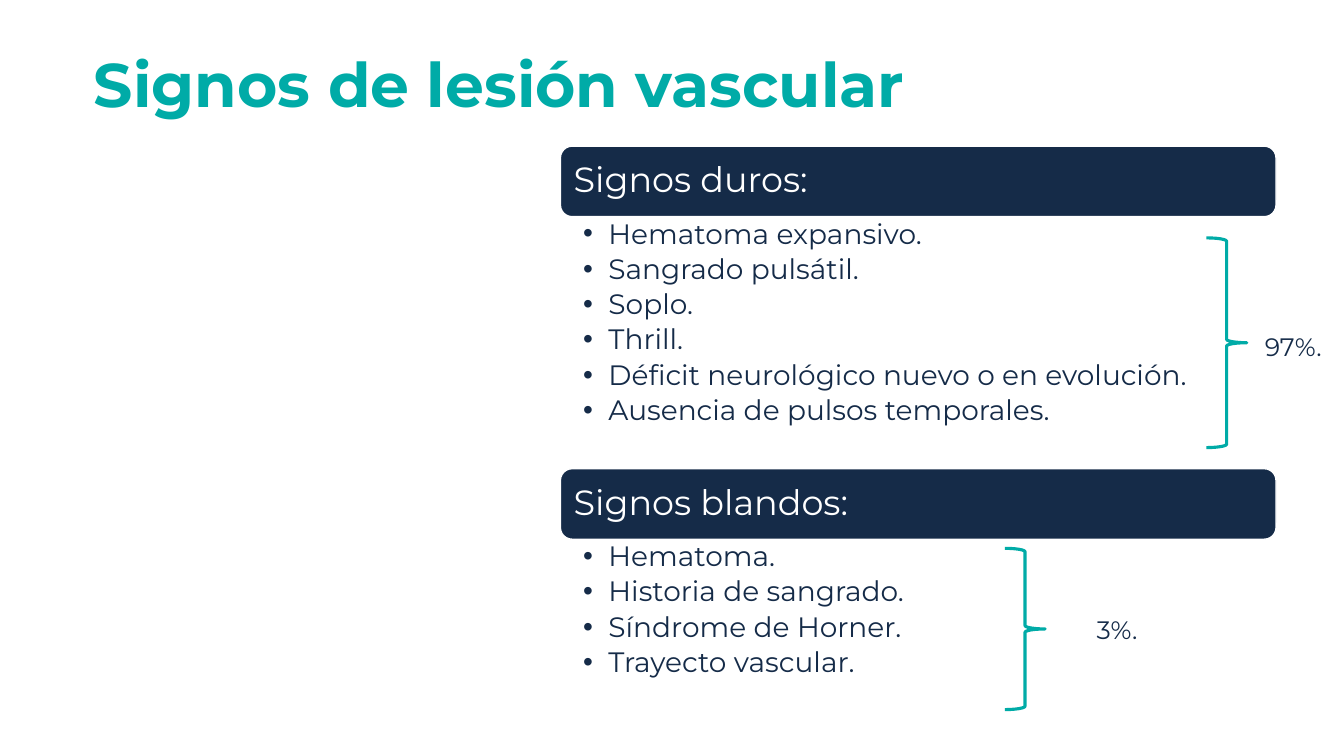
from lxml.etree import SubElement
from pptx import Presentation
from pptx.dml.color import RGBColor
from pptx.enum.shapes import MSO_SHAPE
from pptx.enum.text import MSO_ANCHOR, MSO_AUTO_SIZE, PP_ALIGN
from pptx.oxml.ns import qn
from pptx.util import Pt

FONT = "Montserrat"
TEAL, NAVY, WHITE = "00ABA7", "152B48", "FFFFFF"
COLUMN_LEFT, COLUMN_WIDTH = 400.3, 511.2
HEADING_HEIGHT = 50.4
BULLET_INDENT = 18

# heading, signs, heading top, list height, brace box, share, share box
SECTIONS = [
    ("Signos duros:",
     ["Hematoma expansivo.", "Sangrado pulsátil.", "Soplo.", "Thrill.",
      "Déficit neurológico nuevo o en evolución.",
      "Ausencia de pulsos temporales."],
     104.4, 179.3, (861.8, 169.9, 28.8, 149.8), "97%.", (896.4, 233.3, 63, 29)),
    ("Signos blandos:",
     ["Hematoma.", "Historia de sangrado.", "Síndrome de Horner.",
      "Trayecto vascular."],
     334.8, 120.2, (717.8, 391.7, 28.8, 115.2), "3%.", (776.2, 434.9, 95.8, 29)),
]


def rgb(hex_code):
    return RGBColor.from_string(hex_code)


def place(element, left, top, width, height):
    element.left, element.top = Pt(left), Pt(top)
    element.width, element.height = Pt(width), Pt(height)


def write(frame, lines, size, color=NAVY, bold=False, anchor=MSO_ANCHOR.TOP,
          spacing=1.0, after=0, margins=(7.2, 3.6, 7.2, 3.6), bullets=False):
    frame.word_wrap = True
    frame.auto_size = MSO_AUTO_SIZE.NONE
    frame.vertical_anchor = anchor
    (frame.margin_left, frame.margin_top,
     frame.margin_right, frame.margin_bottom) = map(Pt, margins)
    for index, line in enumerate(lines):
        paragraph = frame.add_paragraph() if index else frame.paragraphs[0]
        paragraph.alignment = PP_ALIGN.LEFT
        paragraph.line_spacing = spacing
        paragraph.space_before, paragraph.space_after = Pt(0), Pt(after)
        if bullets:
            properties = paragraph._p.get_or_add_pPr()
            properties.set("marL", str(Pt(BULLET_INDENT)))
            properties.set("indent", str(-Pt(BULLET_INDENT)))
            SubElement(properties, qn("a:buChar"), char="•")
        run = paragraph.add_run()
        run.text = line
        run.font.name, run.font.size, run.font.bold = FONT, Pt(size), bold
        run.font.color.rgb = rgb(color)


def add_outlined(slide, kind, box, line, line_width, fill=None):
    outlined = slide.shapes.add_shape(kind, *map(Pt, box))
    outlined.shadow.inherit = False
    if fill:
        outlined.fill.solid()
        outlined.fill.fore_color.rgb = rgb(fill)
    else:
        outlined.fill.background()
    outlined.line.color.rgb = rgb(line)
    outlined.line.width = Pt(line_width)
    return outlined


def add_section(slide, signs_list, heading, signs, top, list_height,
                brace_box, share, share_box):
    # Heading bar
    bar = add_outlined(slide, MSO_SHAPE.ROUNDED_RECTANGLE,
                       (COLUMN_LEFT, top, COLUMN_WIDTH, HEADING_HEIGHT),
                       WHITE, 1, fill=NAVY)
    write(bar.text_frame, [heading], 25, color=WHITE, spacing=0.9,
          anchor=MSO_ANCHOR.MIDDLE)
    # Bulleted signs
    place(signs_list, COLUMN_LEFT, top + HEADING_HEIGHT, COLUMN_WIDTH, list_height)
    write(signs_list.text_frame, signs, 20, spacing=0.9, after=3.6,
          margins=(16.3, 2.3, 13.7, 2.3), bullets=True)
    # Brace and its percentage
    add_outlined(slide, MSO_SHAPE.RIGHT_BRACE, brace_box, TEAL, 2.25)
    share_label = slide.shapes.add_textbox(*map(Pt, share_box))
    write(share_label.text_frame, [share], 18)


def main():
    presentation = Presentation()
    presentation.slide_width, presentation.slide_height = Pt(960), Pt(540)
    # Layout with a title and two lists
    slide = presentation.slides.add_slide(presentation.slide_layouts[3])
    title, *lists = list(slide.placeholders)[:3]

    place(title, 59.8, 21.6, 884.9, 82.1)
    write(title.text_frame, ["Signos de lesión vascular"], 44, color=TEAL,
          bold=True, anchor=MSO_ANCHOR.MIDDLE, spacing=0.9)
    for signs_list, section in zip(lists, SECTIONS):
        add_section(slide, signs_list, *section)

    presentation.save("out.pptx")


if __name__ == "__main__":
    main()
